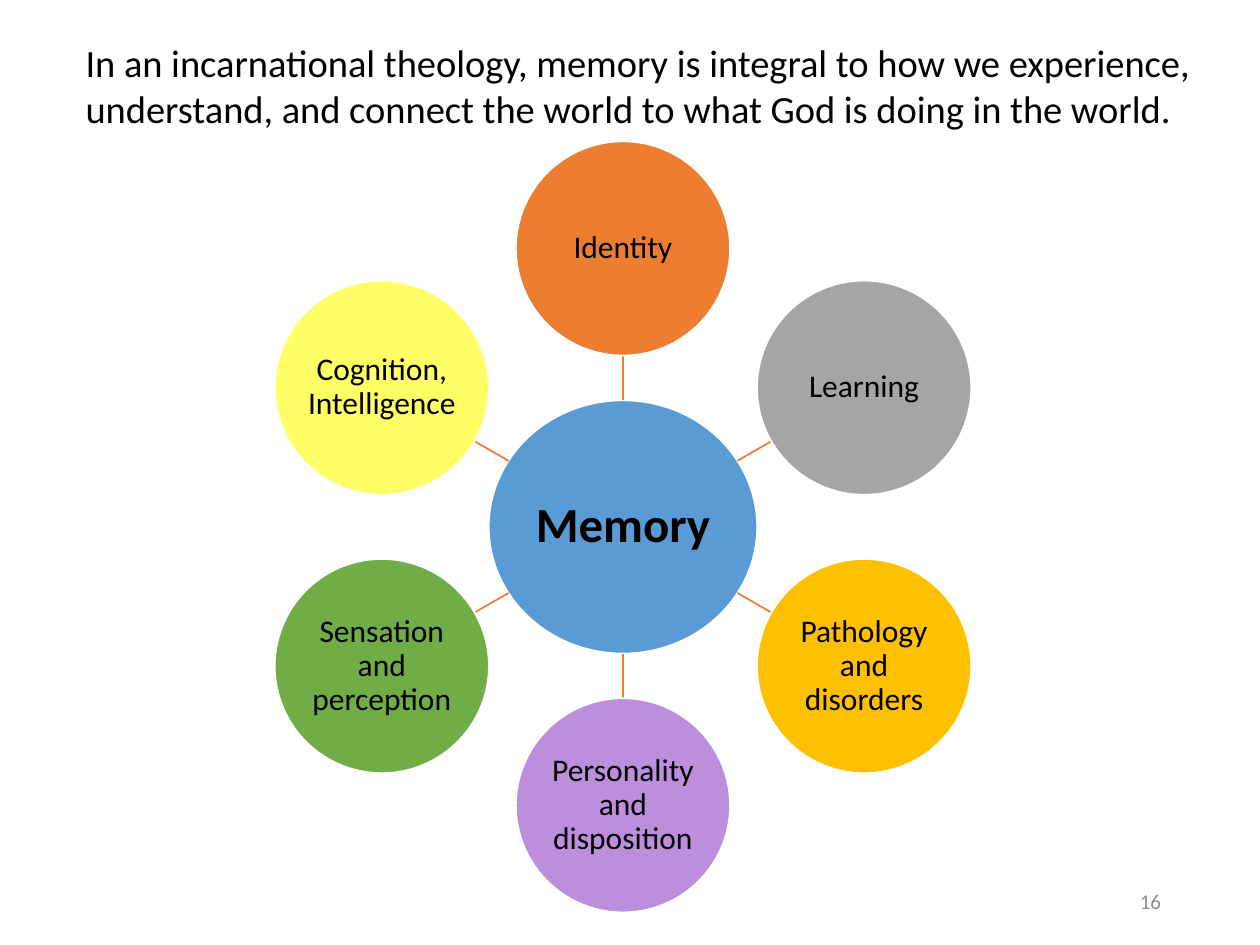
import math
from lxml import etree
from pptx import Presentation
from pptx.dml.color import RGBColor
from pptx.enum import shapes, text
from pptx.oxml import ns
from pptx.util import Pt

BLACK = RGBColor(0x00, 0x00, 0x00)
WHITE = RGBColor(0xFF, 0xFF, 0xFF)
BLUE = RGBColor(0x5B, 0x9B, 0xD5)
ORANGE = RGBColor(0xED, 0x7D, 0x31)
GRAY = RGBColor(0xA5, 0xA5, 0xA5)
GOLD = RGBColor(0xFF, 0xC0, 0x00)
PURPLE = RGBColor(0xBC, 0x8F, 0xDD)
GREEN = RGBColor(0x70, 0xAD, 0x47)
YELLOW = RGBColor(0xFF, 0xFF, 0x66)
NUMBER_GRAY = RGBColor(0x8C, 0x8C, 0x8C)

FONT = "Calibri"
HUB_WIDTH, HUB_HEIGHT = 153.4, 144.7
TOPIC_SIZE = 122.4
TOPICS = [
    ("Identity", ORANGE),
    ("Learning", GRAY),
    ("Pathology and disorders", GOLD),
    ("Personality and disposition", PURPLE),
    ("Sensation and perception", GREEN),
    ("Cognition,\nIntelligence", YELLOW),
]


def write(para, words, size, color=BLACK, bold=False):
    for index, line in enumerate(words.split("\n")):
        if index:
            para.add_line_break()
        span = para.add_run()
        span.text = line
        span.font.name = FONT
        span.font.size = Pt(size)
        span.font.bold = bold
        span.font.color.rgb = color


def add_circle(parent, center_x, center_y, width, height, color, words, size, bold=False):
    circle = parent.shapes.add_shape(
        shapes.MSO_SHAPE.OVAL, Pt(center_x - width / 2), Pt(center_y - height / 2),
        Pt(width), Pt(height))
    circle.shadow.inherit = False
    circle.fill.solid()
    circle.fill.fore_color.rgb = color
    circle.line.color.rgb = WHITE
    circle.line.width = Pt(1)
    frame = circle.text_frame
    frame.word_wrap = True
    frame.vertical_anchor = text.MSO_ANCHOR.MIDDLE
    frame.margin_left = frame.margin_right = Pt(1)
    frame.margin_top = frame.margin_bottom = Pt(1)
    para = frame.paragraphs[0]
    para.alignment = text.PP_ALIGN.CENTER
    para.line_spacing = 0.9
    write(para, words, size, bold=bold)


def add_spoke(parent, start, end):
    spoke = parent.shapes.add_connector(
        shapes.MSO_CONNECTOR.STRAIGHT, *(Pt(value) for value in (*start, *end)))
    spoke.line.color.rgb = ORANGE
    spoke.line.width = Pt(1)
    etree.SubElement(spoke.element.spPr, ns.qn("a:effectLst"))


def add_radial_diagram(page, left, top, width, height):
    group = page.shapes.add_group_shape()
    center_x, center_y = left + width / 2, top + height / 2
    orbit = (height - TOPIC_SIZE) / 2
    add_circle(group, center_x, center_y, HUB_WIDTH, HUB_HEIGHT, BLUE, "Memory", 28, bold=True)
    for index, (words, color) in enumerate(TOPICS):
        angle = math.tau * index / len(TOPICS)
        across, down = math.sin(angle), -math.cos(angle)
        hub_edge = 0.5 / math.hypot(across / HUB_WIDTH, down / HUB_HEIGHT)
        start, end = (
            (center_x + reach * across, center_y + reach * down)
            for reach in (hub_edge, orbit - TOPIC_SIZE / 2))
        add_spoke(group, start, end)
        add_circle(group, center_x + orbit * across, center_y + orbit * down,
                   TOPIC_SIZE, TOPIC_SIZE, color, words, 18)


def add_text(page, left, top, width, height, words, size, color=BLACK,
             align=text.PP_ALIGN.LEFT, anchor=text.MSO_ANCHOR.TOP):
    box = page.shapes.add_textbox(Pt(left), Pt(top), Pt(width), Pt(height))
    frame = box.text_frame
    frame.word_wrap = True
    frame.vertical_anchor = anchor
    para = frame.paragraphs[0]
    para.alignment = align
    write(para, words, size, color)


def main():
    deck = Presentation()
    deck.slide_width, deck.slide_height = Pt(720), Pt(540)
    page = deck.slides.add_slide(deck.slide_layouts[6])
    add_radial_diagram(page, 157, 80.8, 398, 440.6)
    add_text(page, 41.8, 18.7, 652.3, 60.5,
             "In an incarnational theology, memory is integral to how we experience, "
             "understand, and connect the world to what God is doing in the world.", 22)
    add_text(page, 508.5, 500.5, 162, 28.8, "16", 12, NUMBER_GRAY,
             text.PP_ALIGN.RIGHT, text.MSO_ANCHOR.MIDDLE)
    deck.save("out.pptx")


if __name__ == "__main__":
    main()
